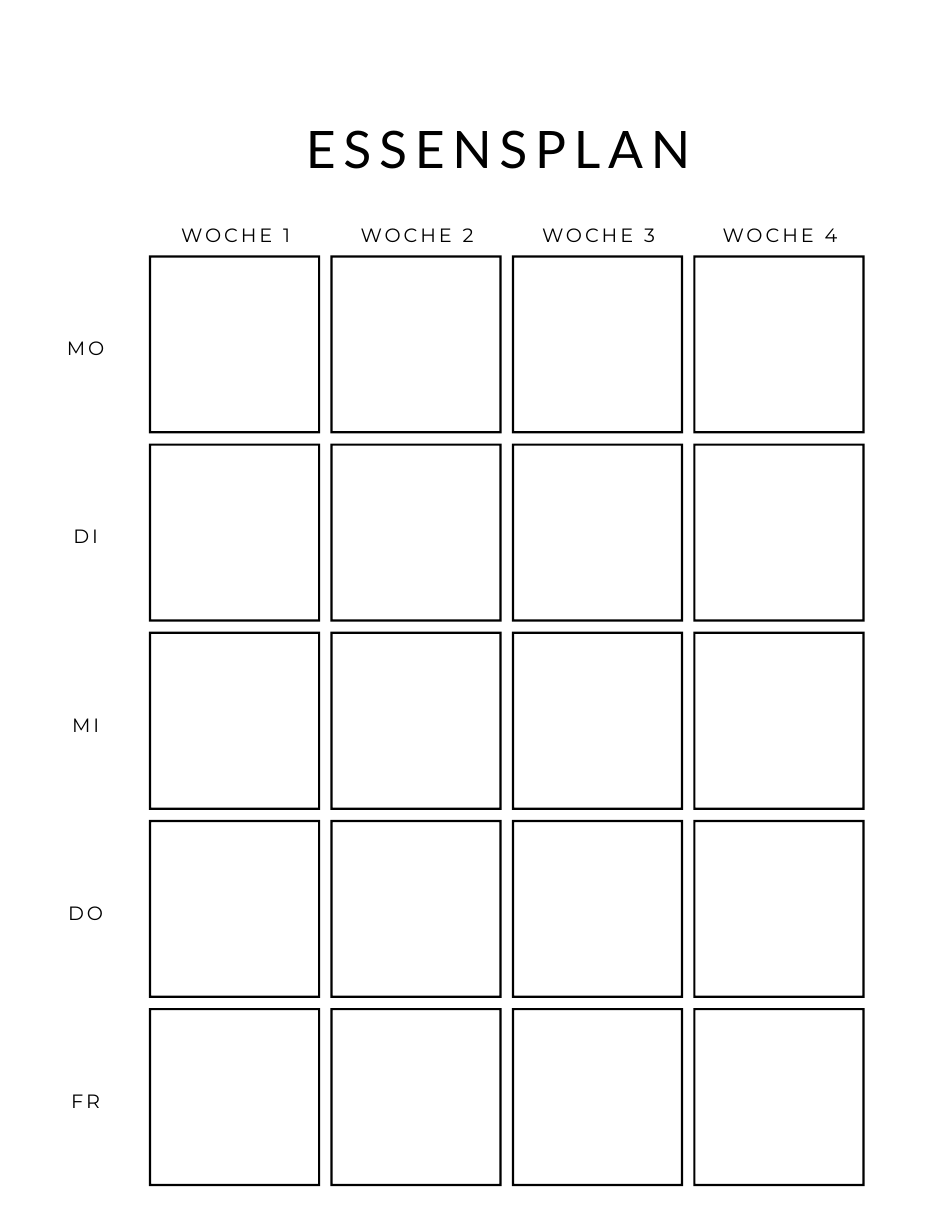
from pptx import Presentation
from pptx.dml.color import RGBColor
from pptx.enum.text import MSO_ANCHOR, MSO_AUTO_SIZE, PP_ALIGN
from pptx.util import Inches, Pt

TITLE = "ESSENSPLAN"
WEEKS = ["WOCHE 1", "WOCHE 2", "WOCHE 3", "WOCHE 4"]
DAYS = ["MO", "DI", "MI", "DO", "FR"]

BLACK = RGBColor(0x00, 0x00, 0x00)
WHITE = RGBColor(0xFF, 0xFF, 0xFF)

GRID_LEFT, GRID_TOP = 1.33, 2.28
CELL_WIDTH, CELL_HEIGHT = 1.53, 1.59
COLUMN_STEP, ROW_STEP = 1.62, 1.68
BORDER = 0.02
LABEL_HEIGHT = 0.23


def write(box, text, *, font="Montserrat", size=12.4, leading=17.4, tracking=1.9):
    frame = box.text_frame
    frame.word_wrap = True
    frame.auto_size = MSO_AUTO_SIZE.SHAPE_TO_FIT_TEXT
    frame.vertical_anchor = MSO_ANCHOR.TOP
    frame.margin_left = frame.margin_right = 0
    frame.margin_top = frame.margin_bottom = 0
    para = frame.paragraphs[0]
    para.alignment = PP_ALIGN.CENTER
    para.line_spacing = Pt(leading)
    para.space_before = Pt(0)
    span = para.add_run()
    span.text = text
    span.font.name = font
    span.font.size = Pt(size)
    span.font.color.rgb = BLACK
    span.font._element.set("spc", str(round(tracking * 100)))


def add_label(page, text, left, top, width):
    box = page.shapes.add_textbox(
        Inches(left), Inches(top), Inches(width), Inches(LABEL_HEIGHT))
    write(box, text)


def add_cell(page, left, top):
    """Draw a black frame: an outer outline with an inner one cut out."""
    right, bottom = left + CELL_WIDTH, top + CELL_HEIGHT
    outer = [(left, top), (left, bottom), (right, bottom), (right, top)]
    inner = [(left + BORDER, top + BORDER), (right - BORDER, top + BORDER),
             (right - BORDER, bottom - BORDER), (left + BORDER, bottom - BORDER)]
    outer, inner = ([(Inches(x), Inches(y)) for x, y in ring]
                    for ring in (outer, inner))
    builder = page.shapes.build_freeform(*outer[0])
    builder.add_line_segments(outer[1:], close=True)
    builder.move_to(*inner[0])
    builder.add_line_segments(inner[1:], close=True)
    cell = builder.convert_to_shape()
    cell.shadow.inherit = False
    cell.fill.solid()
    cell.fill.fore_color.rgb = BLACK
    cell.line.fill.background()


def main():
    deck = Presentation()
    deck.slide_width, deck.slide_height = Inches(8.5), Inches(11)
    page = deck.slides.add_slide(deck.slide_layouts[5])
    page.background.fill.solid()
    page.background.fill.fore_color.rgb = WHITE

    title = page.shapes.title
    title.left, title.top = Inches(2.03), Inches(0.95)
    title.width, title.height = Inches(4.84), Inches(0.61)
    write(title, TITLE, font="Lato", size=33.2, leading=46.5, tracking=5)

    for column, week in enumerate(WEEKS):
        add_label(page, week, 1.37 + column * COLUMN_STEP, 1.96, 1.47)
    for row, day in enumerate(DAYS):
        top = GRID_TOP + row * ROW_STEP
        add_label(page, day, 0.28, top + 0.69, 0.97)
        for column in range(len(WEEKS)):
            add_cell(page, GRID_LEFT + column * COLUMN_STEP, top)

    deck.save("out.pptx")


if __name__ == "__main__":
    main()
